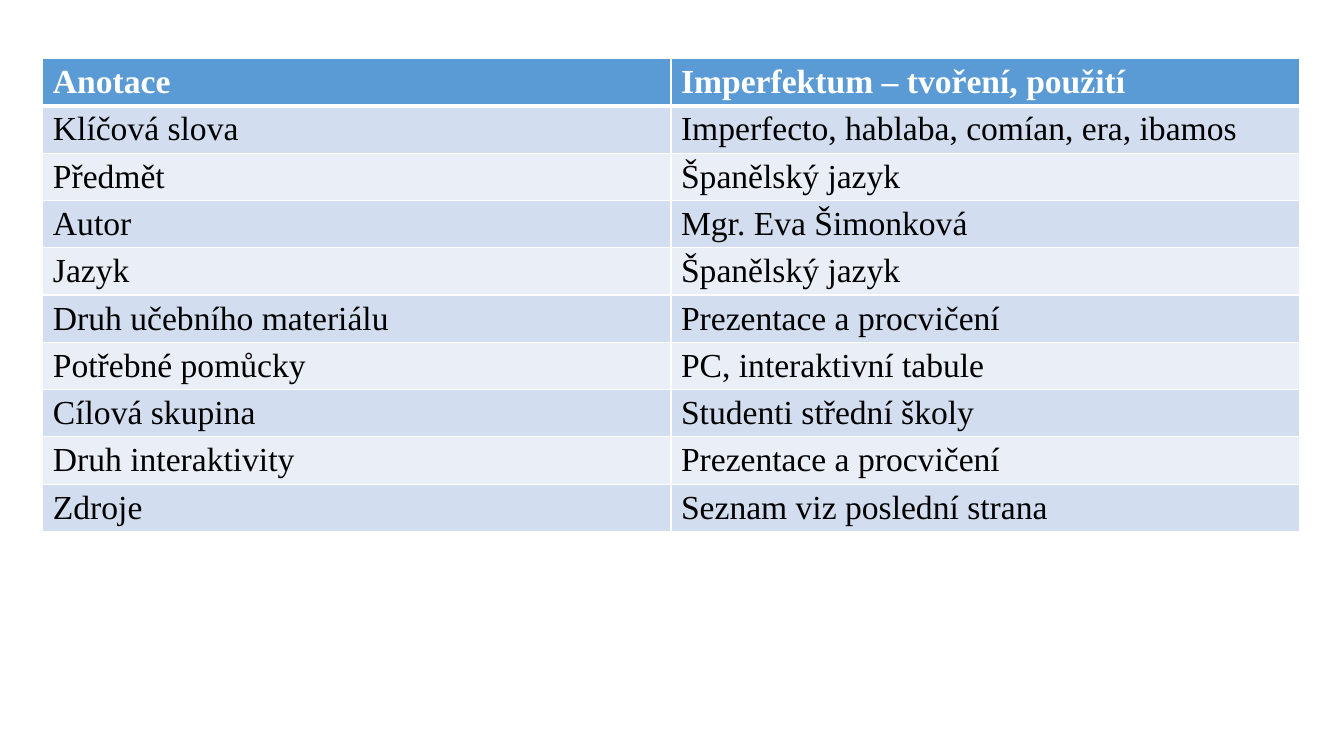
from dataclasses import dataclass

from lxml.etree import SubElement
from pptx import Presentation
from pptx.dml.color import RGBColor
from pptx.oxml.ns import qn
from pptx.table import _Cell as Cell
from pptx.util import Cm, Pt

COLORS = {
    "header": "5B9BD5",
    "dark_band": "D2DEEF",
    "light_band": "EAEFF7",
    "white": "FFFFFF",
    "black": "000000",
}
FONT_NAME = "Times New Roman"
FONT_SIZE = Pt(24)
COLUMN_WIDTH = Cm(15.83)
ROW_HEIGHT = Cm(1.04)
THIN, THICK = Pt(1), Pt(3)


@dataclass(frozen=True)
class Entry:
    label: str
    value: str


ENTRIES = [
    Entry("Anotace", "Imperfektum – tvoření, použití"),
    Entry("Klíčová slova", "Imperfecto, hablaba, comían, era, ibamos"),
    Entry("Předmět", "Španělský jazyk"),
    Entry("Autor", "Mgr. Eva Šimonková"),
    Entry("Jazyk", "Španělský jazyk"),
    Entry("Druh učebního materiálu", "Prezentace a procvičení"),
    Entry("Potřebné pomůcky", "PC, interaktivní tabule"),
    Entry("Cílová skupina", "Studenti střední školy"),
    Entry("Druh interaktivity", "Prezentace a procvičení"),
    Entry("Zdroje", "Seznam viz poslední strana"),
]


def set_borders(cell: Cell, top: int, bottom: int) -> None:
    """Draw white borders; the side ones are always thin."""
    properties = cell._tc.get_or_add_tcPr()
    widths = {"a:lnL": THIN, "a:lnR": THIN, "a:lnT": top, "a:lnB": bottom}
    for tag, width in widths.items():
        line = SubElement(properties, qn(tag), w=str(int(width)))
        fill = SubElement(line, qn("a:solidFill"))
        SubElement(fill, qn("a:srgbClr"), val=COLORS["white"])


def write_cell(cell: Cell, text: str, row: int) -> None:
    is_header = row == 0
    band = "header" if is_header else "dark_band" if row % 2 else "light_band"
    # The thick line under the header is shared with the first body row.
    set_borders(cell, THICK if row == 1 else THIN, THICK if is_header else THIN)
    cell.fill.solid()
    cell.fill.fore_color.rgb = RGBColor.from_string(COLORS[band])

    cell.text_frame.text = text
    font = cell.text_frame.paragraphs[0].runs[0].font
    font.name = FONT_NAME
    font.size = FONT_SIZE
    font.bold = is_header
    font.color.rgb = RGBColor.from_string(COLORS["white" if is_header else "black"])


def main() -> None:
    presentation = Presentation()
    presentation.slide_width = Cm(33.87)
    presentation.slide_height = Cm(19.05)
    slide = presentation.slides.add_slide(presentation.slide_layouts[6])

    table = slide.shapes.add_table(
        len(ENTRIES), 2, Cm(1.08), Cm(1.48),
        2 * COLUMN_WIDTH, len(ENTRIES) * ROW_HEIGHT,
    ).table
    for column in table.columns:
        column.width = COLUMN_WIDTH
    for row, entry in enumerate(ENTRIES):
        table.rows[row].height = ROW_HEIGHT
        write_cell(table.cell(row, 0), entry.label, row)
        write_cell(table.cell(row, 1), entry.value, row)

    presentation.save("out.pptx")


if __name__ == "__main__":
    main()
